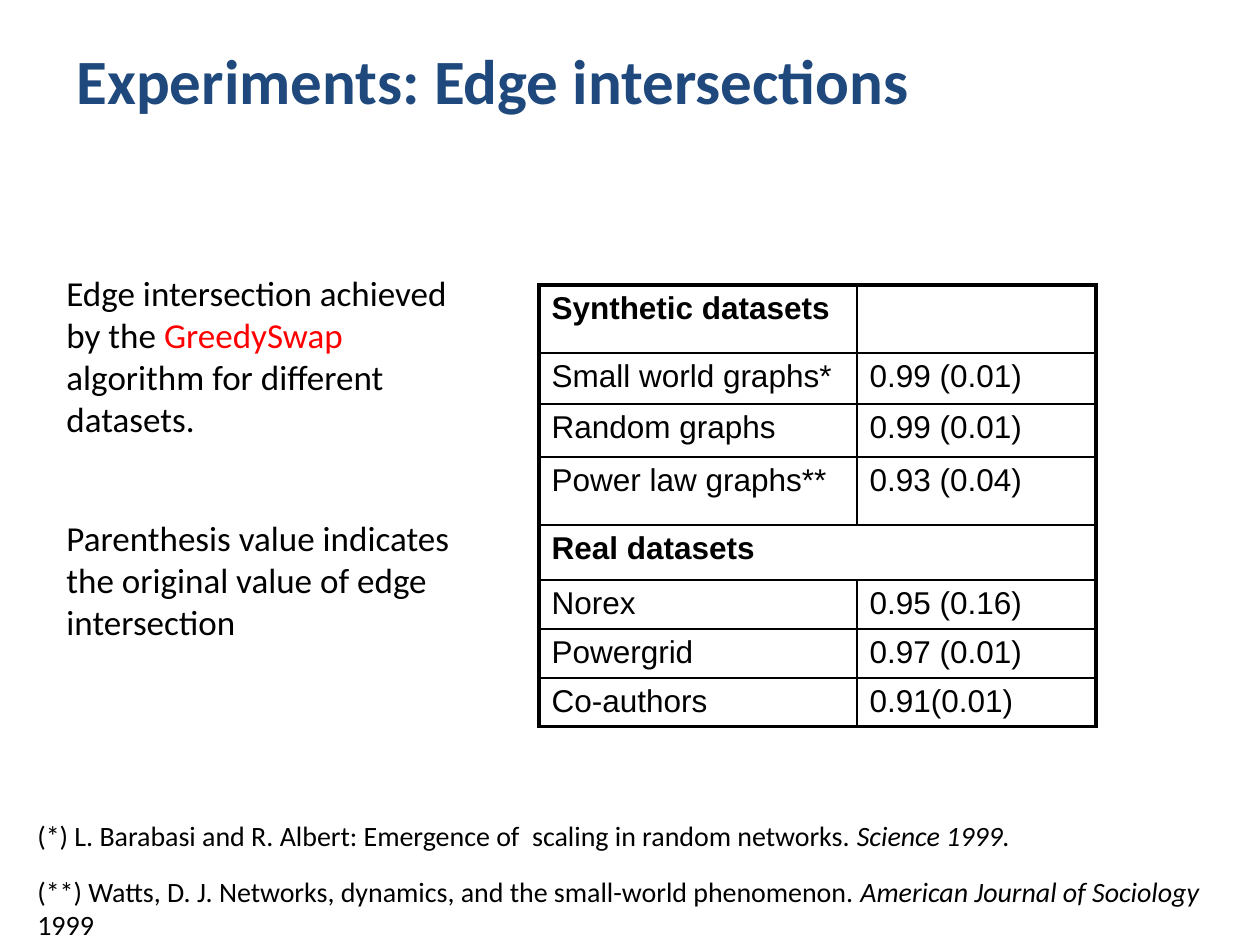
from lxml.etree import SubElement
from pptx import Presentation
from pptx.dml.color import RGBColor
from pptx.enum.text import MSO_ANCHOR, PP_ALIGN
from pptx.oxml.ns import qn
from pptx.util import Emu, Pt

PX = 914400 // 126
BLACK = RGBColor(0x00, 0x00, 0x00)
NAVY = RGBColor(0x1F, 0x49, 0x7D)
RED = RGBColor(0xFF, 0x00, 0x00)
THIN, THICK = 1, 2.25

TITLE = "Experiments: Edge intersections"

# Paragraphs are lists of (text, font changes) runs.
EXPLANATION = [
    [("Edge intersection achieved by the ", {}),
     ("GreedySwap ", {"color": RED}),
     ("algorithm for different datasets.", {})],
    [("Parenthesis value indicates the original value of edge intersection", {})],
]
FOOTNOTES = [
    ((25, 812, 1235, 50), [
        ("(*) L. Barabasi and R. Albert: Emergence of  scaling in random networks. ", {}),
        ("Science 1999.", {"italic": True})]),
    ((25, 868, 1235, 80), [
        ("(**) Watts, D. J. Networks, dynamics, and the small-world phenomenon. ", {}),
        ("American Journal of Sociology ", {"italic": True}),
        ("1999", {})]),
]

# (row height, label, value); a value of None marks a heading across both columns.
ROWS = [
    (68, "Synthetic datasets", ""),
    (51, "Small world graphs*", "0.99 (0.01)"),
    (53, "Random graphs", "0.99 (0.01)"),
    (68, "Power law graphs**", "0.93 (0.04)"),
    (55, "Real datasets", None),
    (49, "Norex", "0.95 (0.16)"),
    (49, "Powergrid", "0.97 (0.01)"),
    (49, "Co-authors", "0.91(0.01)"),
]
COLUMNS = (318, 239)
TABLE_AT = (539, 285)


def px(*values):
    return [Emu(v * PX) for v in values]


def add_run(p, text, size, font="Calibri", color=BLACK, bold=False, italic=False):
    r = p.add_run()
    r.text = text
    f = r.font
    f.name, f.size, f.bold, f.italic = font, Pt(size), bold, italic
    f.color.rgb = color


def add_text(s, box, paragraphs, size, gap=0):
    tf = s.shapes.add_textbox(*px(*box)).text_frame
    tf.word_wrap = True
    for i, runs in enumerate(paragraphs):
        p = tf.add_paragraph() if i else tf.paragraphs[0]
        p.space_before = Pt(gap if i else 0)
        for text, changes in runs:
            add_run(p, text, size, **changes)


def set_borders(cell, widths):
    """Draw black cell borders; widths are points for left, right, top, bottom."""
    tcPr = cell._tc.get_or_add_tcPr()
    for i, (side, width) in enumerate(zip("LRTB", widths)):
        ln = tcPr.makeelement(qn(f"a:ln{side}"), {"w": str(Pt(width))})
        fill = SubElement(ln, qn("a:solidFill"))
        SubElement(fill, qn("a:srgbClr"), val=str(BLACK))
        tcPr.insert(i, ln)


def add_results_table(s):
    size = sum(COLUMNS), sum(row[0] for row in ROWS)
    table = s.shapes.add_table(len(ROWS), len(COLUMNS), *px(*TABLE_AT, *size)).table
    table.first_row = table.horz_banding = False
    for column, width in zip(table.columns, COLUMNS):
        column.width = Emu(width * PX)
    for i, (height, label, value) in enumerate(ROWS):
        table.rows[i].height = Emu(height * PX)
        heading = not value
        spans = value is None
        if spans:
            table.cell(i, 0).merge(table.cell(i, 1))
        for j, text in enumerate((label, value)):
            cell = table.cell(i, j)
            cell.fill.background()
            set_borders(cell, (
                THICK if j == 0 else THIN,
                THICK if j == 1 or spans else THIN,
                THICK if i == 0 else THIN,
                THICK if i == len(ROWS) - 1 else THIN))
            if text:
                add_run(cell.text_frame.paragraphs[0], text, 18, "Arial", bold=heading)


def main():
    prs = Presentation()
    prs.slide_width, prs.slide_height = px(1260, 945)
    s = prs.slides.add_slide(prs.slide_layouts[5])

    title = s.shapes.title
    title.left, title.top, title.width, title.height = px(64, 32, 1071, 94)
    tf = title.text_frame
    tf.vertical_anchor = MSO_ANCHOR.MIDDLE
    p = tf.paragraphs[0]
    p.alignment = PP_ALIGN.LEFT
    add_run(p, TITLE, 36, color=NAVY, bold=True)

    add_results_table(s)
    for box, runs in FOOTNOTES:
        add_text(s, box, [runs], 16)
    add_text(s, (54, 265, 437, 391), EXPLANATION, 20, gap=44)
    prs.save("out.pptx")


if __name__ == "__main__":
    main()
